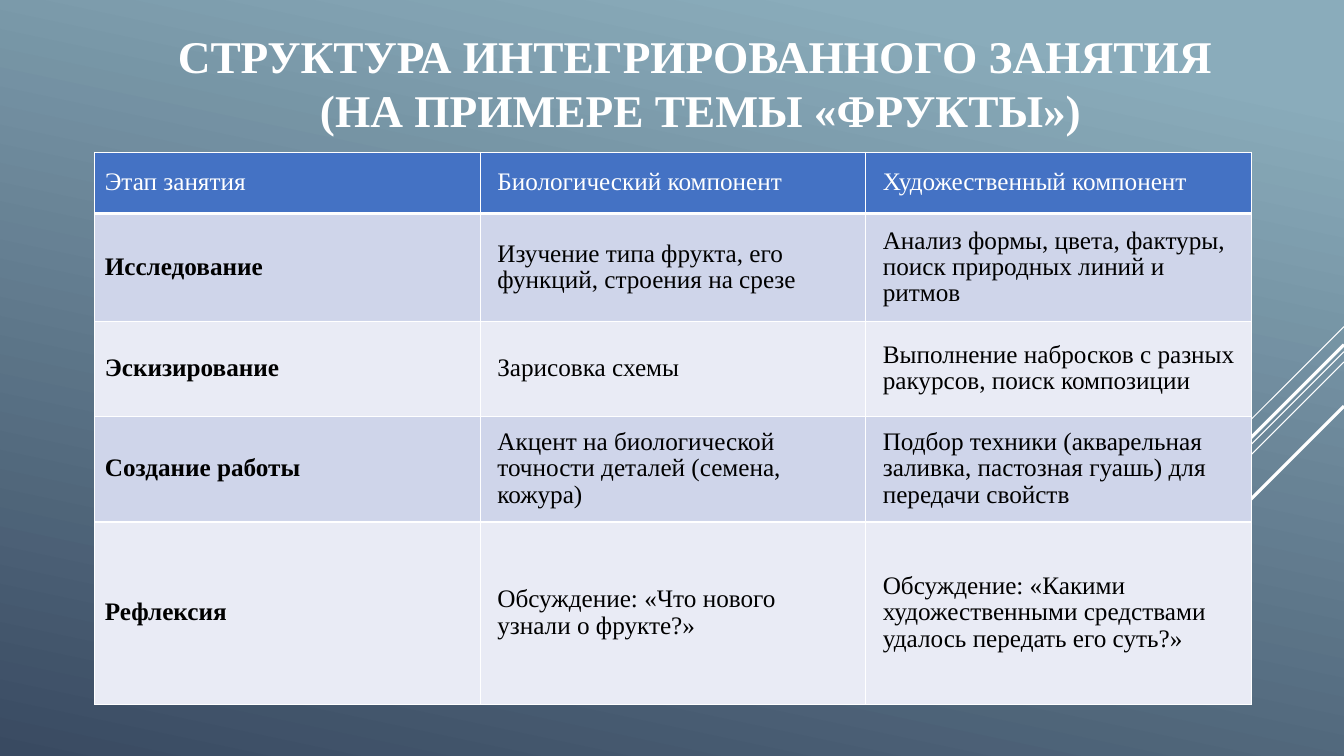
from dataclasses import dataclass

from lxml.etree import SubElement
from pptx import Presentation
from pptx.dml.color import RGBColor
from pptx.enum.shapes import MSO_CONNECTOR
from pptx.enum.text import MSO_ANCHOR, MSO_AUTO_SIZE, PP_ALIGN
from pptx.oxml import parse_xml
from pptx.oxml.ns import nsdecls, qn
from pptx.slide import Slide
from pptx.table import _Cell
from pptx.text.text import _Paragraph
from pptx.util import Emu, Inches, Pt

SLIDE_WIDTH, SLIDE_HEIGHT = Inches(13.33), Inches(7.5)
FONT = "Times New Roman"
WHITE, BLACK = "FFFFFF", "000000"
HEADER_FILL = "4472C4"
BAND_FILLS = ("CFD5EA", "E9EBF5")
TITLE = "СТРУКТУРА ИНТЕГРИРОВАННОГО ЗАНЯТИЯ \v(НА ПРИМЕРЕ ТЕМЫ «ФРУКТЫ»)"


@dataclass(frozen=True)
class Ray:
    start: float
    reach: float
    weight: float


@dataclass(frozen=True)
class Stage:
    height: float
    texts: tuple[str, str, str]


RAYS = (
    Ray(43.2, 13.33, 0.75),
    Ray(46.53, 43.47, 0.75),
    Ray(47.87, 27.6, 0.75),
    Ray(45.6, 25.47, 2.25),
    Ray(53.73, 18.53, 2.25),
)
STAGES = (
    Stage(8.13, ("Этап занятия", "Биологический компонент", "Художественный компонент")),
    Stage(14.27, ("Исследование", "Изучение типа фрукта, его функций, строения на срезе",
                  "Анализ формы, цвета, фактуры, поиск природных линий и ритмов")),
    Stage(12.53, ("Эскизирование", "Зарисовка схемы",
                  "Выполнение набросков с разных ракурсов, поиск композиции")),
    Stage(14, ("Создание работы", "Акцент на биологической точности деталей (семена, кожура)",
               "Подбор техники (акварельная заливка, пастозная гуашь) для передачи свойств")),
    Stage(24.13, ("Рефлексия", "Обсуждение: «Что нового узнали о фрукте?»",
                  "Обсуждение: «Какими художественными средствами удалось передать его суть?»")),
)


def across(percent: float) -> Emu:
    return Emu(round(SLIDE_WIDTH * percent / 100))


def down(percent: float) -> Emu:
    return Emu(round(SLIDE_HEIGHT * percent / 100))


def color(value: str) -> RGBColor:
    return RGBColor.from_string(value)


def format_paragraph(paragraph: _Paragraph, size: float, spacing: float, ink: str, bold: bool) -> None:
    paragraph.line_spacing = Pt(spacing)
    paragraph.font.name = FONT
    paragraph.font.size = Pt(size)
    paragraph.font.bold = bold
    paragraph.font.color.rgb = color(ink)


def paint_background(slide: Slide) -> None:
    fill = slide.background.fill
    fill.gradient()
    fill.gradient_angle = 258
    for stop, (position, shade) in zip(fill.gradient_stops, ((0.1, "8AACBB"), (1, "394A61"))):
        stop.position = position
        stop.color.rgb = color(shade)


def draw_ray(slide: Slide, ray: Ray) -> None:
    reach = down(ray.reach)
    top = down(ray.start)
    line = slide.shapes.add_connector(
        MSO_CONNECTOR.STRAIGHT, SLIDE_WIDTH, top, SLIDE_WIDTH - reach, top + reach)
    line.line.color.rgb = color(WHITE)
    line.line.width = Pt(ray.weight)
    SubElement(line._element.spPr, qn("a:effectLst"))


def write_title(slide: Slide) -> None:
    title = slide.shapes.title
    title.left, title.top = across(8.48), down(4.27)
    title.width, title.height = across(87.32), down(19.47)
    frame = title.text_frame
    frame.text = TITLE
    frame.word_wrap = True
    frame.auto_size = MSO_AUTO_SIZE.NONE
    frame.vertical_anchor = MSO_ANCHOR.MIDDLE
    frame.margin_top, frame.margin_bottom = 0, down(6.13)
    paragraph = frame.paragraphs[0]
    paragraph.alignment = PP_ALIGN.CENTER
    format_paragraph(paragraph, 32.4, 38.6, WHITE, True)


def draw_borders(cell: _Cell, weights: dict[str, float]) -> None:
    properties = cell._tc.get_or_add_tcPr()
    for index, (side, weight) in enumerate(weights.items()):
        properties.insert(index, parse_xml(
            f'<a:ln{side} {nsdecls("a")} w="{Pt(weight)}"><a:solidFill>'
            f'<a:srgbClr val="{WHITE}"/></a:solidFill></a:ln{side}>'))


def fill_cell(cell: _Cell, text: str, row: int, column: int) -> None:
    header = row == 0
    cell.text = text
    cell.vertical_anchor = MSO_ANCHOR.MIDDLE
    cell.margin_top = cell.margin_bottom = Inches(0.1)
    cell.margin_left = Inches(0.1 if column == 0 else 0.17)
    cell.margin_right = Inches(0.1 if column == 2 and not header else 0.17)
    cell.fill.solid()
    cell.fill.fore_color.rgb = color(HEADER_FILL if header else BAND_FILLS[(row - 1) % 2])
    draw_borders(cell, {"L": 1, "R": 1, "T": 3 if row == 1 else 1, "B": 3 if header else 1})
    format_paragraph(cell.text_frame.paragraphs[0], 18, 18.8,
                     WHITE if header else BLACK, column == 0 and not header)


def draw_stages(slide: Slide) -> None:
    total = sum(stage.height for stage in STAGES)
    table = slide.shapes.add_table(
        len(STAGES), 3, across(7.05), down(20.13), across(86.05), down(total)).table
    for row, stage in enumerate(STAGES):
        table.rows[row].height = down(stage.height)
        for column, text in enumerate(stage.texts):
            fill_cell(table.cell(row, column), text, row, column)


def main() -> None:
    presentation = Presentation()
    presentation.slide_width, presentation.slide_height = SLIDE_WIDTH, SLIDE_HEIGHT
    slide = presentation.slides.add_slide(presentation.slide_layouts[5])
    paint_background(slide)
    for ray in RAYS:
        draw_ray(slide, ray)
    write_title(slide)
    draw_stages(slide)
    presentation.save("out.pptx")


if __name__ == "__main__":
    main()
